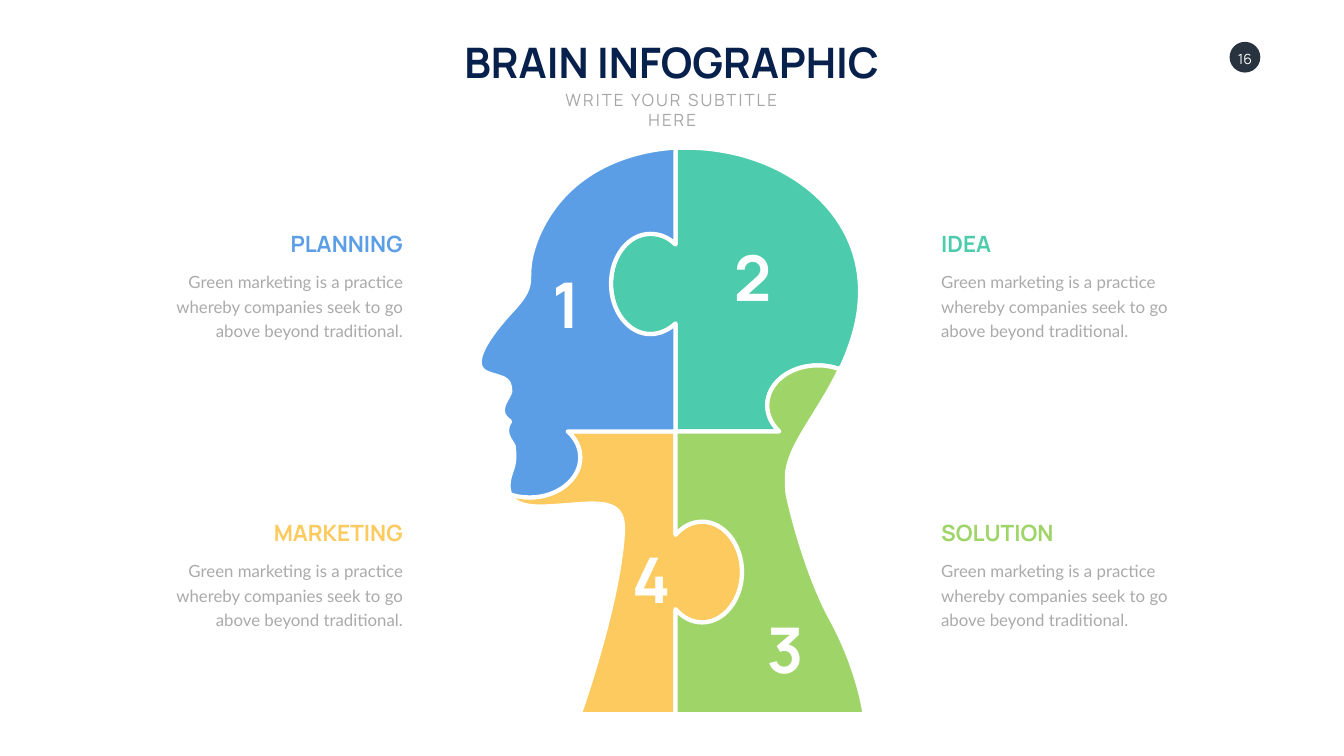
from lxml.etree import SubElement
from pptx import Presentation
from pptx.util import Inches, Pt
from pptx.dml.color import RGBColor
from pptx.enum.shapes import MSO_SHAPE as Shape
from pptx.enum.text import MSO_ANCHOR as Anchor, MSO_AUTO_SIZE as Fit, PP_ALIGN as Align
from pptx.oxml.ns import qn

W, H = 26.66, 15
WHITE, GREY = "FFFFFF", "AAAAAA"
NOTE = "Green marketing is a practice whereby companies seek to go above beyond traditional."

# Text blocks: heading, its width, colour, column, row
BLOCKS = [
    ("PLANNING", 2.52, "5C9EE6", 0, 0),
    ("MARKETING", 2.87, "FCCA5E", 0, 1),
    ("IDEA", 1.23, "4CCCAC", 1, 0),
    ("SOLUTION", 2.45, "9FD468", 1, 1),
]
COLS = [(3.04, Align.RIGHT), (18.57, Align.LEFT)]
TOP, STEP, WIDE = 4.51, 5.73, 5.05

# Numbers: left, top, width
SPOTS = [(10.89, 5.21, 0.68), (14.47, 4.68, 0.92), (15.09, 12.05, 0.97), (12.39, 10.66, 1.06)]

# Outlines: a pair is a line to a point, six values are a curve
HUB = (13.4, 8.56)
SEAMS = [  # from the hub outwards: left, top, right, bottom
    [HUB, (11.26, 8.56), (11.42, 8.7, 11.51, 8.88, 11.51, 9.08),
     (11.51, 9.51, 11.06, 9.87, 10.51, 9.87), (10.37, 9.87, 10.24, 9.85, 10.12, 9.81)],
    [HUB, (13.4, 6.42), (13.26, 6.55, 13.09, 6.63, 12.9, 6.63),
     (12.47, 6.63, 12.12, 6.18, 12.12, 5.63), (12.12, 5.08, 12.47, 4.64, 12.9, 4.64),
     (13.09, 4.64, 13.26, 4.71, 13.4, 4.85), (13.4, 2.93)],
    [HUB, (15.46, 8.56), (15.31, 8.42, 15.22, 8.24, 15.22, 8.04),
     (15.22, 7.6, 15.67, 7.25, 16.22, 7.25), (16.36, 7.25, 16.49, 7.27, 16.61, 7.31),
     (16.66, 7.33)],
    [HUB, (13.4, 10.61), (13.54, 10.45, 13.72, 10.35, 13.93, 10.35),
     (14.36, 10.35, 14.72, 10.8, 14.72, 11.35), (14.72, 11.9, 14.36, 12.35, 13.93, 12.35),
     (13.72, 12.35, 13.54, 12.25, 13.4, 12.09), (13.4, 14.17)],
]
EDGES = [  # outer rim between one seam and the next: face, crown, nape, throat
    [(10.12, 9.81), (10.05, 9.63, 10.11, 9.45, 10.15, 9.34),
     (10.24, 9.11, 10.19, 8.89, 10.19, 8.89), (10.23, 8.81, 9.93, 8.63, 10.12, 8.36),
     (9.82, 8.17, 10.06, 7.95, 10.12, 7.78), (10.13, 7.46, 9.93, 7.51, 9.65, 7.39),
     (9.58, 7.36, 9.54, 7.31, 9.52, 7.24), (9.48, 7.04, 9.68, 6.68, 10.14, 6.18),
     (10.76, 5.52, 10.29, 5.62, 10.67, 4.68), (11.32, 3.18, 12.84, 2.96, 13.4, 2.93)],
    [(13.4, 2.93), (13.58, 2.93), (15.44, 2.92, 17.07, 4.09, 17.06, 5.79),
     (17.06, 6.32, 16.91, 6.79, 16.72, 7.22), (16.66, 7.33)],
    [(16.66, 7.33), (16.59, 7.47), (16.17, 8.29, 15.6, 8.93, 15.61, 9.47),
     (15.61, 9.57, 15.61, 9.67, 15.62, 9.77), (15.62, 9.83, 15.94, 11.27, 16.48, 12.27),
     (17.04, 13.29, 17.15, 14.17, 17.15, 14.17), (13.4, 14.17)],
    [(13.4, 14.17), (11.5, 14.17), (11.5, 14.17, 12.31, 11.89, 12.36, 10.49),
     (12.36, 10.42, 12.35, 10.36, 12.34, 10.3), (12.22, 9.81, 11.46, 10.05, 10.7, 10.05),
     (10.37, 10.05, 10.2, 9.96, 10.13, 9.84), (10.12, 9.81)],
]
FILLS = ["5C9EE6", "4CCCAC", "9FD468", "FCCA5E"]
STACK = [3, 1, 0, 2]  # back to front


def rgb(code):
    return RGBColor.from_string(code)


def flip(route):
    """Run a route backwards."""
    back = [route[-1][-2:]]
    for prev, seg in reversed(list(zip(route, route[1:]))):
        bend = seg[2:4] + seg[:2] if len(seg) == 6 else ()
        back.append(bend + prev[-2:])
    return back


def write(box, text, size, color, font="Manrope", bold=False,
          align=Align.CENTER, anchor=Anchor.TOP, wrap=True):
    frame = box.text_frame
    frame.auto_size = Fit.NONE
    frame.word_wrap, frame.vertical_anchor = wrap, anchor
    para = frame.paragraphs[0]
    para.alignment, para.space_before = align, Pt(0)
    run = para.add_run()
    run.text = text
    run.font.size, run.font.name, run.font.bold = Pt(size), font, bold
    run.font.color.rgb = rgb(color)
    return para


def place(item, x, y, w, h):
    item.left, item.top, item.width, item.height = map(Inches, (x, y, w, h))
    return item


deck = Presentation()
deck.slide_width, deck.slide_height = Inches(W), Inches(H)
slide = deck.slides.add_slide(deck.slide_layouts[0])
slide.background.fill.solid()
slide.background.fill.fore_color.rgb = rgb("FEFFFE")
shapes = slide.shapes


def label(x, y, w, h, *args, **kw):
    return write(shapes.add_textbox(*map(Inches, (x, y, w, h))), *args, **kw)


def draw(route, color):
    """Build a closed outline, then bend the lines that are curves."""
    ends = [seg[-2:] for seg in route]
    x0, y0 = (min(axis) for axis in zip(*ends))
    grid = [(x * 1000, y * 1000) for x, y in ends]
    pen = shapes.build_freeform(*grid[0], scale=914.4)
    pen.add_line_segments(grid[1:], close=True)
    piece = pen.convert_to_shape()
    for node, seg in zip(list(piece._element.iter(qn("a:lnTo"))), route[1:]):
        if len(seg) == 6:
            curve = SubElement(node.getparent(), qn("a:cubicBezTo"))
            for x, y in zip(seg[::2], seg[1::2]):
                SubElement(curve, qn("a:pt"), x=str(round((x - x0) * 1000)),
                           y=str(round((y - y0) * 1000)))
            node.getparent().replace(node, curve)
    piece.shadow.inherit = False
    piece.fill.solid()
    piece.fill.fore_color.rgb = rgb(color)
    piece.line.color.rgb = rgb("FEFFFE")
    piece.line.width = Pt(6)


# Title and subtitle
title, sub = slide.placeholders
write(place(title, 8.91, 0.67, 8.83, 1.11), "BRAIN INFOGRAPHIC", 60, "08204C", bold=True)
para = write(place(sub, 10.62, 1.72, 5.43, 0.5), "WRITE YOUR SUBTITLE HERE", 24, "A6A6A6")
para.runs[0].font._element.set("spc", "300")

# Page number
dot = shapes.add_shape(Shape.OVAL, *map(Inches, (24.39, 0.83, 0.61, 0.61)))
dot.shadow.inherit = False
dot.fill.solid()
dot.fill.fore_color.rgb = rgb("29323F")
dot.line.fill.background()
label(24.39, 0.99, 0.61, 0.34, "16", 20, WHITE, anchor=Anchor.MIDDLE, wrap=False)

# Head pieces: out along a seam, round the rim, back along the next seam
for i in STACK:
    after = SEAMS[(i + 1) % len(SEAMS)]
    draw(SEAMS[i] + EDGES[i][1:] + flip(after)[1:], FILLS[i])

# Headings and notes
for head, wide, color, col, row in BLOCKS:
    x, side = COLS[col]
    y = TOP + row * STEP
    left = x + WIDE - wide if side == Align.RIGHT else x
    label(left, y, wide, 0.64, head, 32, color, bold=True, align=side,
          anchor=Anchor.BOTTOM, wrap=False)
    para = label(x, y + 0.75, WIDE, 1.52, NOTE, 24, GREY, font="Lato", align=side)
    para.line_spacing, para.space_before = Pt(35), Pt(5)

# Numbers on the pieces
for i, (x, y, w) in enumerate(SPOTS, 1):
    label(x, y, w, 1.62, str(i), 90, WHITE, bold=True, anchor=Anchor.MIDDLE, wrap=False)

deck.save("out.pptx")
